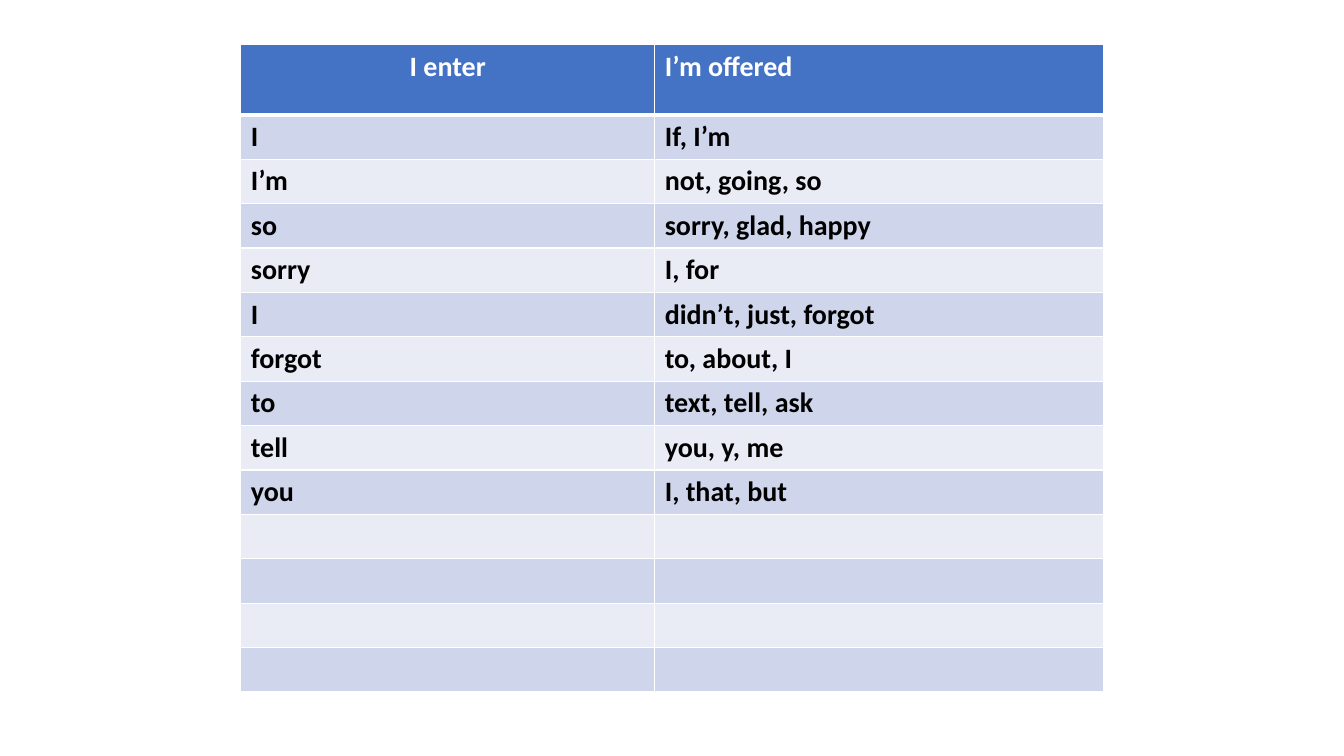
from lxml import etree
from pptx import Presentation
from pptx.dml import color
from pptx.enum import text
from pptx.oxml import ns
from pptx.util import Pt

WHITE, BLACK, BLUE = "FFFFFF", "000000", "4472C4"
BANDS = ("CFD5EA", "E9EBF5")
HEADINGS = ("I enter", "I’m offered")
SUGGESTIONS = [
    ("I", "If, I’m"),
    ("I’m", "not, going, so"),
    ("so", "sorry, glad, happy"),
    ("sorry", "I, for"),
    ("I", "didn’t, just, forgot"),
    ("forgot", "to, about, I"),
    ("to", "text, tell, ask"),
    ("tell", "you, y, me"),
    ("you", "I, that, but"),
]
EMPTY_ROWS = 4
HEADER_HEIGHT, ROW_HEIGHT = 50, 31.7
FIRST_COLUMN_SHARE = 0.48


def rgb(value):
    """Return the colour for a hex string."""
    return color.RGBColor.from_string(value)


def set_borders(cell, widths):
    """Draw white cell borders with the given widths in points."""
    properties = cell._tc.get_or_add_tcPr()
    for position, (side, width) in enumerate(widths.items()):
        line = etree.Element(ns.qn(f"a:ln{side}"), w=str(Pt(width)))
        fill = etree.SubElement(line, ns.qn("a:solidFill"))
        etree.SubElement(fill, ns.qn("a:srgbClr"), val=WHITE)
        properties.insert(position, line)


def write_cell(cell, words, fill, ink):
    """Fill a cell and set its words in bold type."""
    cell.fill.solid()
    cell.fill.fore_color.rgb = rgb(fill)
    para = cell.text_frame.paragraphs[0]
    if words:
        span = para.add_run()
        span.text = words
        for name, value in {"name": "Calibri", "size": Pt(20), "bold": True}.items():
            setattr(span.font, name, value)
        span.font.color.rgb = rgb(ink)


def add_suggestion_table(page, left, top, width):
    """Place the table of entered words and offered suggestions."""
    rows = [HEADINGS, *SUGGESTIONS, *[("", "")] * EMPTY_ROWS]
    height = HEADER_HEIGHT + ROW_HEIGHT * (len(rows) - 1)
    table = page.shapes.add_table(
        len(rows), len(HEADINGS), Pt(left), Pt(top), Pt(width), Pt(height)
    ).table
    table.horz_banding = False
    for column, share in zip(table.columns, (FIRST_COLUMN_SHARE, 1 - FIRST_COLUMN_SHARE)):
        column.width = Pt(width * share)
    for index, row in enumerate(rows):
        header = index == 0
        table.rows[index].height = Pt(HEADER_HEIGHT if header else ROW_HEIGHT)
        fill = BLUE if header else BANDS[(index - 1) % 2]
        widths = {"L": 1, "R": 1, "T": 3 if index == 1 else 1, "B": 3 if header else 1}
        for cell, words in zip(table.rows[index].cells, row):
            write_cell(cell, words, fill, WHITE if header else BLACK)
            set_borders(cell, widths)
    table.cell(0, 0).text_frame.paragraphs[0].alignment = text.PP_ALIGN.CENTER


def main():
    """Build and save the deck."""
    deck = Presentation()
    deck.slide_width, deck.slide_height = Pt(960), Pt(540)
    page = deck.slides.add_slide(deck.slide_layouts[6])
    add_suggestion_table(page, 172, 32, 616)
    deck.save("out.pptx")


if __name__ == "__main__":
    main()
